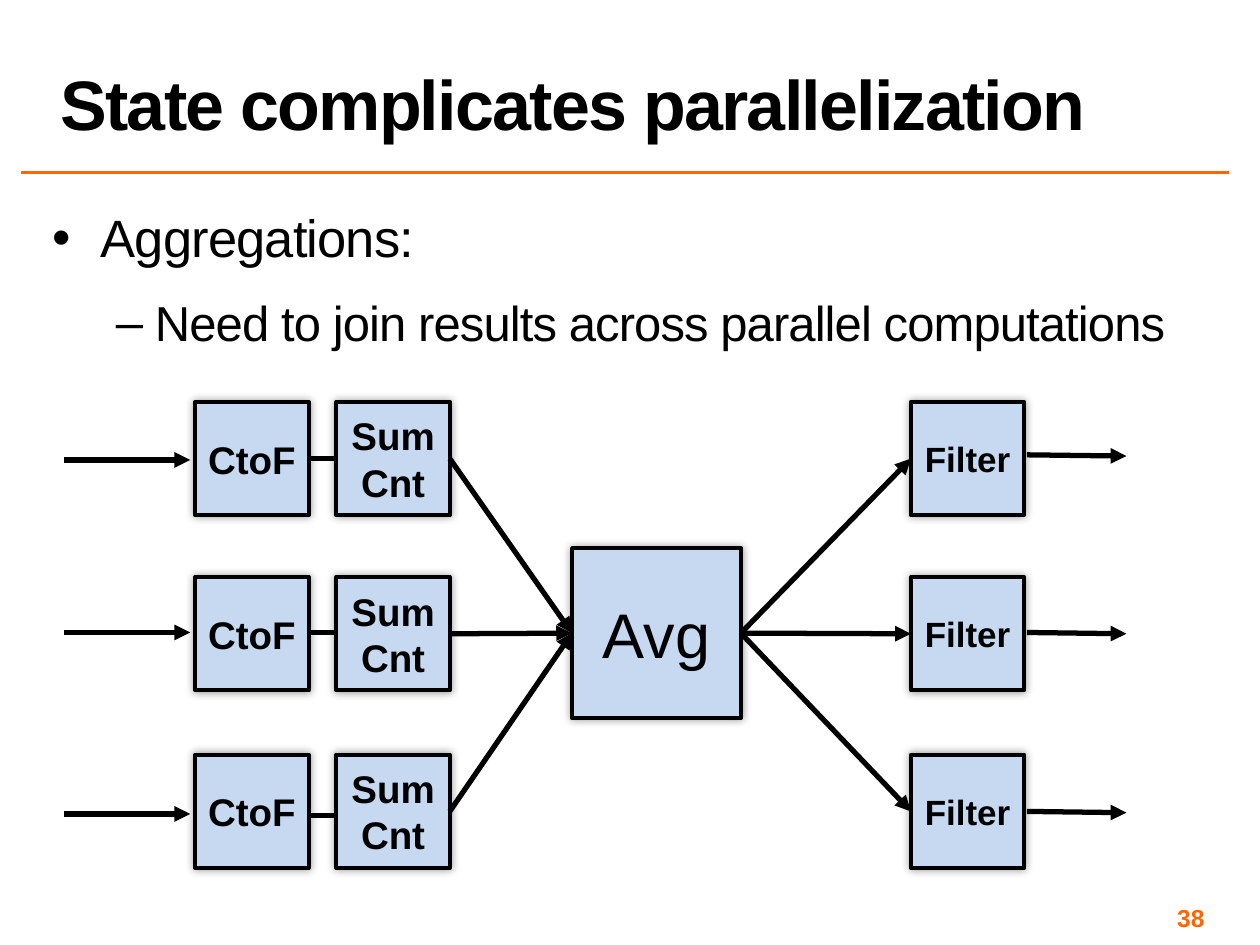
from lxml.etree import SubElement
from pptx import Presentation
from pptx.dml.color import RGBColor
from pptx.enum.shapes import MSO_CONNECTOR, MSO_SHAPE
from pptx.enum.text import MSO_ANCHOR, MSO_AUTO_SIZE, PP_ALIGN
from pptx.oxml.ns import qn
from pptx.util import Inches, Pt

COLORS = {"ink": "000000", "accent": "FF6600", "box": "C6D9F1"}
FONT = "Arial"
LEFT_SITE, RIGHT_SITE = 1, 3


class SlideBuilder:
    """Holds the style and the current slide."""

    def __init__(self, slide):
        self.slide = slide

    def color(self, name):
        return RGBColor.from_string(COLORS[name])

    def add_span(self, para, text, size, color="ink", bold=False, spacing=0):
        span = para.add_run()
        span.text = text
        span.font.name = FONT
        span.font.size = Pt(size)
        span.font.bold = bold
        span.font.color.rgb = self.color(color)
        if spacing:
            span._r.get_or_add_rPr().set("spc", str(int(spacing * 100)))

    def place(self, shape, left, top, width, height):
        shape.left, shape.top = Inches(left), Inches(top)
        shape.width, shape.height = Inches(width), Inches(height)

    def set_insets(self, frame, inset):
        frame.margin_left = frame.margin_right = Inches(inset)
        frame.margin_top = frame.margin_bottom = Inches(inset)

    def title(self, text):
        title = self.slide.shapes.title
        self.place(title, 0.38, 0.02, 9.37, 1.17)
        frame = title.text_frame
        frame.auto_size = MSO_AUTO_SIZE.NONE
        frame.vertical_anchor = MSO_ANCHOR.BOTTOM
        para = frame.paragraphs[0]
        para.alignment = PP_ALIGN.LEFT
        para.line_spacing = 0.8
        self.add_span(para, text, 40, bold=True, spacing=-1)

    def bullets(self, items):
        body = self.slide.placeholders[1]
        self.place(body, 0.38, 1.59, 9.37, 1.65)
        frame = body.text_frame
        frame.auto_size = MSO_AUTO_SIZE.NONE
        self.set_insets(frame, 0.04)
        for index, (text, size, mark, margin, indent, leading) in enumerate(items):
            para = frame.add_paragraph() if index else frame.paragraphs[0]
            para.level = index
            para.line_spacing = leading
            para.space_before = para.space_after = Pt(8)
            properties = para._p.get_or_add_pPr()
            properties.set("marL", str(Inches(margin)))
            properties.set("indent", str(Inches(indent)))
            SubElement(properties, qn("a:buFont"), typeface=FONT)
            SubElement(properties, qn("a:buChar"), char=mark)
            self.add_span(para, text, size, spacing=-0.5)

    def page_number(self, number):
        box = self.slide.shapes.add_textbox(
            Inches(7.27), Inches(7.17), Inches(2.33), Inches(0.23))
        frame = box.text_frame
        frame.word_wrap = True
        frame.vertical_anchor = MSO_ANCHOR.MIDDLE
        self.set_insets(frame, 0.04)
        para = frame.paragraphs[0]
        para.alignment = PP_ALIGN.RIGHT
        self.add_span(para, number, 14, "accent", bold=True)

    def box(self, lines, left, top, width, height, size, bold=True):
        box = self.slide.shapes.add_shape(
            MSO_SHAPE.RECTANGLE, Inches(left), Inches(top), Inches(width), Inches(height))
        box.fill.solid()
        box.fill.fore_color.rgb = self.color("box")
        box.line.color.rgb = self.color("ink")
        box.line.width = Pt(2.25)
        # Soft shadow all round
        box.shadow.inherit = False
        effects = box._element.spPr.find(qn("a:effectLst"))
        shadow = SubElement(effects, qn("a:outerShdw"), blurRad=str(Pt(5)),
                            dist="0", dir="0", rotWithShape="0")
        tint = SubElement(shadow, qn("a:srgbClr"), val=COLORS["ink"])
        SubElement(tint, qn("a:alpha"), val="40000")

        frame = box.text_frame
        frame.vertical_anchor = MSO_ANCHOR.MIDDLE
        for index, text in enumerate(lines):
            para = frame.add_paragraph() if index else frame.paragraphs[0]
            para.alignment = PP_ALIGN.CENTER
            self.add_span(para, text, size, bold=bold)
        return box

    def line(self, start, end, color="ink", width=3, arrow=True):
        line = self.slide.shapes.add_connector(
            MSO_CONNECTOR.STRAIGHT, *(Inches(value) for value in (*start, *end)))
        line.line.color.rgb = self.color(color)
        line.line.width = Pt(width)
        if arrow:
            SubElement(line.line._get_or_add_ln(), qn("a:tailEnd"), type="triangle")
        SubElement(line._element.spPr, qn("a:effectLst"))
        return line

    def link(self, source, target):
        arrow = self.line((0, 0), (1, 1))
        arrow.begin_connect(source, RIGHT_SITE)
        arrow.end_connect(target, LEFT_SITE)


def main():
    deck = Presentation()
    deck.slide_width, deck.slide_height = Inches(10), Inches(7.5)
    page = SlideBuilder(deck.slides.add_slide(deck.slide_layouts[1]))

    # Heading, rule and page number
    page.line((0.17, 1.37), (9.75, 1.37), "accent", 2, arrow=False)
    page.title("State complicates parallelization")
    page.bullets([
        ("Aggregations:", 30, "•", 0.38, -0.38, 1.0),
        ("Need to join results across parallel computations", 28, "–", 0.81, -0.31, 0.95),
    ])
    page.page_number("38")

    # Joining step shared by all lanes
    average = page.box(["Avg"], 4.54, 4.35, 1.34, 1.35, 36, bold=False)

    # Parallel lanes: box top, then heights of input, stub and output lines
    side = 0.9
    lanes = [
        (3.19, 3.65, 3.64, 3.61),
        (4.58, 5.02, 5.02, 5.02),
        (5.99, 6.46, 6.47, 6.44),
    ]
    for top, input_y, stub_y, output_y in lanes:
        page.box(["CtoF"], 1.55, top, side, side, 22)
        partial = page.box(["Sum", "Cnt"], 2.67, top, side, side, 22)
        filter_box = page.box(["Filter"], 7.23, top, side, side, 20)
        page.line((0.51, input_y), (1.51, input_y))
        page.line((2.46, stub_y), (2.68, stub_y), arrow=False)
        page.link(partial, average)
        page.link(average, filter_box)
        page.line((8.15, output_y), (8.94, output_y + 0.01))

    deck.save("out.pptx")


if __name__ == "__main__":
    main()
